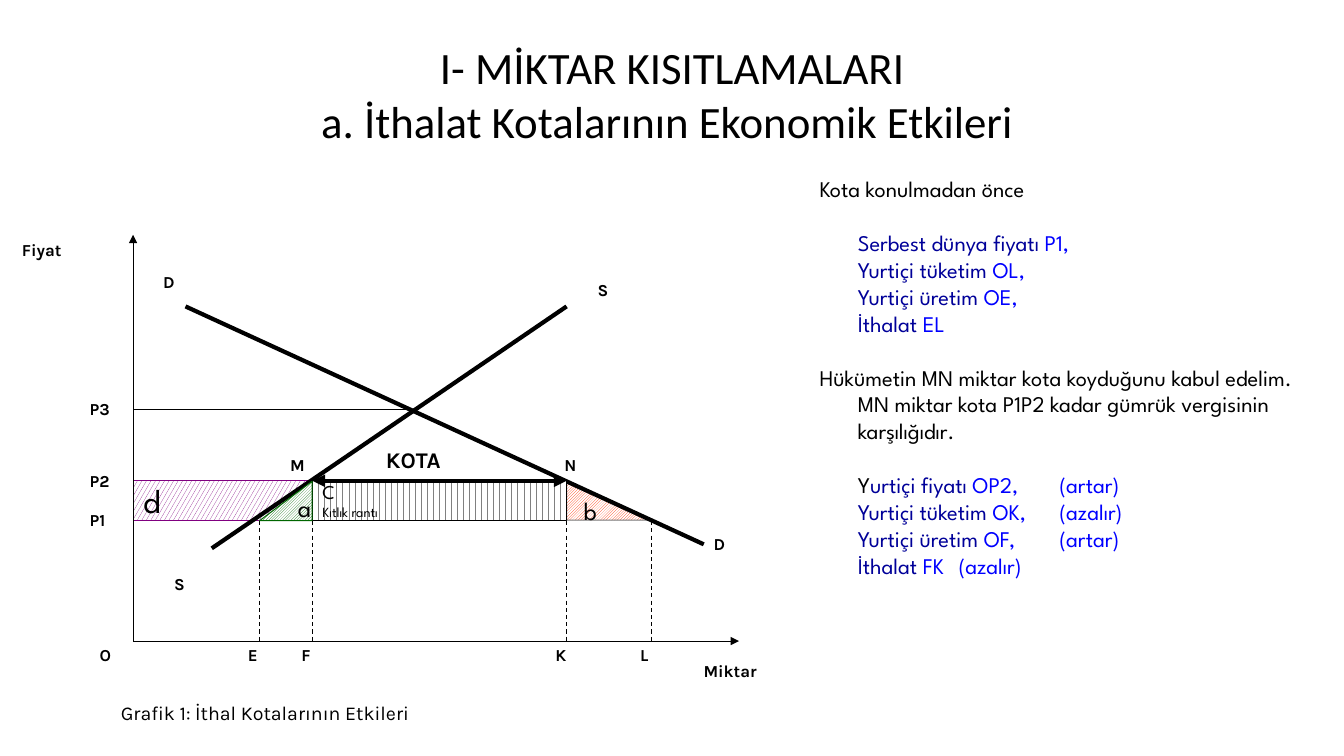
from lxml.etree import SubElement
from pptx import Presentation
from pptx.dml.color import RGBColor
from pptx.enum.dml import MSO_LINE, MSO_PATTERN
from pptx.enum.shapes import MSO_CONNECTOR, MSO_SHAPE
from pptx.enum.text import MSO_ANCHOR, PP_ALIGN
from pptx.oxml.ns import qn
from pptx.util import Inches, Pt

BLACK, NAVY, BLUE = "000000", "000099", "0000FF"


def color(value):
    return RGBColor.from_string(value)


def add_label(text, left, top, width, height=0.3, size=12, bold=True, font="Karla"):
    box = slide.shapes.add_textbox(Inches(left), Inches(top), Inches(width), Inches(height))
    box.text_frame.word_wrap = True
    box.text_frame.text = text
    paragraph = box.text_frame.paragraphs[0]
    paragraph.font.name = font
    paragraph.font.size = Pt(size)
    paragraph.font.bold = bold
    paragraph.font.color.rgb = color(BLACK)
    return box


presentation = Presentation()
presentation.slide_width = Inches(13.33)
presentation.slide_height = Inches(7.5)
slide = presentation.slides.add_slide(presentation.slide_layouts[6])

title = add_label("I- MİKTAR KISITLAMALARI\va. İthalat Kotalarının Ekonomik Etkileri ",
                  0.67, 0.3, 12, 1.25, 32, False, "Calibri")
title.text_frame.vertical_anchor = MSO_ANCHOR.MIDDLE
title.text_frame.paragraphs[0].alignment = PP_ALIGN.CENTER

# Chart coordinates shared by areas and lines
axis_x, axis_y = 1.32, 6.36
price_1, price_2, price_3 = 5.17, 4.77, 4.06
quantity_e, quantity_f, quantity_k, quantity_l = 2.57, 3.1, 5.62, 6.46
area_height = 0.39

# Areas: preset, left, top, width, height, rotation, pattern, pattern color, line color, texts
areas = [
    (MSO_SHAPE.RECTANGLE, axis_x, price_2, 1.78, area_height, 0,
     MSO_PATTERN.LARGE_CONFETTI, "800080", "800080", [("d", 24)]),
    (MSO_SHAPE.RIGHT_TRIANGLE, quantity_k, price_2, 0.84, area_height, 0,
     MSO_PATTERN.LIGHT_UPWARD_DIAGONAL, "FF3300", "777777", [("b", 18)]),
    (MSO_SHAPE.RECTANGLE, quantity_f, price_2, 2.52, area_height, 0,
     MSO_PATTERN.DASHED_VERTICAL, "808080", BLACK, [("C", 14), ("Kıtlık rantı", 10)]),
    (MSO_SHAPE.RIGHT_TRIANGLE, 2.64, 4.71, area_height, 0.52, 270,
     MSO_PATTERN.LIGHT_UPWARD_DIAGONAL, "006600", "006600", [("a", 18)]),
]
# Lines: start, end, width, dashed, head arrow, tail arrow
curves_and_axes = [
    (axis_x, axis_y, 7.33, axis_y, 0.75, False, False, True),
    (axis_x, axis_y, axis_x, 2.33, 0.75, False, False, True),
    (2.1, 5.44, 5.62, 3.04, 3, False, False, False),
    (1.84, 3.04, 6.98, 5.4, 3, False, False, False),
]
guides = [(x, price_1, x, axis_y, 0.75, True, False, False)
          for x in (quantity_e, quantity_f, quantity_k, quantity_l)]
guides += [
    (4.04, price_3, axis_x, price_3, 0.75, False, False, False),
    (quantity_f, price_2, quantity_k, price_2, 3, False, True, True),
]

# The curves lie above areas d and b, and below areas C and a
for layer_areas, layer_lines in ((areas[:2], curves_and_axes), (areas[2:], guides)):
    for preset, left, top, width, height, rotation, pattern, ink, outline, texts in layer_areas:
        area = slide.shapes.add_shape(preset, Inches(left), Inches(top),
                                      Inches(width), Inches(height))
        area.shadow.inherit = False
        area.rotation = rotation
        area.fill.patterned()
        area.fill.pattern = pattern
        area.fill.fore_color.rgb = color(ink)
        area.fill.back_color.rgb = color("FFFFFF")
        area.line.color.rgb = color(outline)
        area.line.width = Pt(0.75)
        frame = area.text_frame
        frame.word_wrap = False
        frame.vertical_anchor = MSO_ANCHOR.MIDDLE
        if rotation:
            area.element.txBody.bodyPr.set("vert", "eaVert")
        frame.text = "\n".join(text for text, size in texts)
        for paragraph, (text, size) in zip(frame.paragraphs, texts):
            paragraph.alignment = PP_ALIGN.LEFT
            paragraph.font.name = "League Spartan"
            paragraph.font.size = Pt(size)
            paragraph.font.color.rgb = color(BLACK)
    for x1, y1, x2, y2, weight, dashed, head, tail in layer_lines:
        line = slide.shapes.add_connector(MSO_CONNECTOR.STRAIGHT, Inches(x1), Inches(y1),
                                          Inches(x2), Inches(y2))
        line.line.color.rgb = color(BLACK)
        line.line.width = Pt(weight)
        if dashed:
            line.line.dash_style = MSO_LINE.DASH
        for tag, wanted in (("a:headEnd", head), ("a:tailEnd", tail)):
            if wanted:
                SubElement(line.line._get_or_add_ln(), qn(tag), type="triangle")
        SubElement(line.element.spPr, qn("a:effectLst"))

for text, left, top, width in [
    ("Fiyat", 0.12, 2.33, 1.66), ("Miktar", 6.88, 6.51, 1.53),
    ("D", 1.52, 2.65, 0.54), ("D", 6.98, 5.25, 0.54),
    ("S", 5.83, 2.73, 0.74), ("S", 1.63, 5.64, 0.74),
    ("P3", 0.79, 3.91, 0.73), ("P2", 0.79, 4.62, 0.73), ("P1", 0.79, 5.01, 0.73),
    ("M", 2.78, 4.46, 0.54), ("N", 5.5, 4.46, 0.54),
    ("O", 0.89, 6.35, 0.54), ("E", 2.36, 6.35, 0.54), ("F", 2.89, 6.35, 0.54),
    ("K", 5.41, 6.35, 0.54), ("L", 6.25, 6.35, 0.54),
]:
    add_label(text, left, top, width)
add_label("KOTA", 3.73, 4.38, 1.47, 0.37, 16)
add_label("Grafik 1: İthal Kotalarının Etkileri", 1.1, 6.9, 6.09, 0.33, 14, False)

# Explanation: each group of paragraphs is set off by one line of space
groups = [
    [[("Kota konulmadan önce", BLACK)]],
    [[("Serbest dünya fiyatı ", NAVY), ("P1,", BLUE)],
     [("Yurtiçi tüketim ", NAVY), ("OL,", BLUE)],
     [("Yurtiçi üretim ", NAVY), ("OE,", BLUE)],
     [("İthalat", NAVY), (" EL", BLUE)]],
    [[("Hükümetin MN miktar kota koyduğunu kabul edelim. MN miktar kota P1P2 "
       "kadar gümrük vergisinin karşılığıdır.", BLACK)]],
    [[("Y", BLACK), ("urtiçi fiyatı ", NAVY), ("OP2,\t(artar)", BLUE)],
     [("Yurtiçi tüketim ", NAVY), ("OK,\t(azalır)", BLUE)],
     [("Yurtiçi üretim ", NAVY), ("OF,\t(artar)", BLUE)],
     [("İthalat", NAVY), (" FK\t(azalır)", BLUE)]],
]
explanation = slide.shapes.add_textbox(Inches(8.03), Inches(1.69), Inches(5.04), Inches(4.14))
frame = explanation.text_frame
frame.word_wrap = True
for group_index, group in enumerate(groups):
    for row_index, runs in enumerate(group):
        first = group_index == row_index == 0
        paragraph = frame.paragraphs[0] if first else frame.add_paragraph()
        paragraph.font.name = "League Spartan"
        paragraph.font.size = Pt(16)
        paragraph.space_before = Pt(19.3 if row_index == 0 and not first else 0)
        properties = paragraph._p.get_or_add_pPr()
        properties.set("marL", str(Inches(0.38)))
        properties.set("indent", str(Inches(-0.38 if len(group) == 1 else 0)))
        if group_index == 3:
            tab_list = properties.makeelement(qn("a:tabLst"))
            SubElement(tab_list, qn("a:tab"), pos=str(Inches(2.25)), algn="l")
            properties.find(qn("a:defRPr")).addprevious(tab_list)
        for text, run_color in runs:
            run = paragraph.add_run()
            run.text = text
            run.font.color.rgb = color(run_color)

presentation.save("out.pptx")
